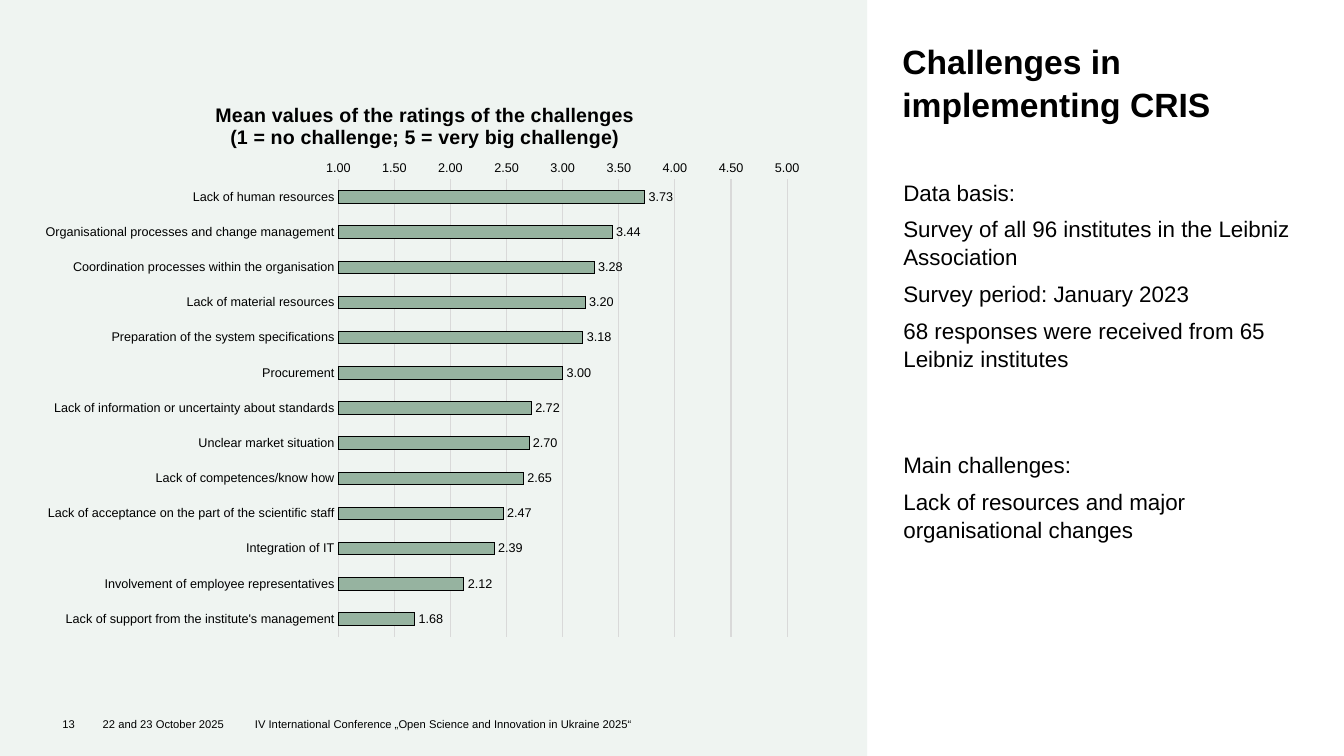
from dataclasses import dataclass

from lxml import etree
from pptx import Presentation
from pptx.chart.data import CategoryChartData
from pptx.dml.color import RGBColor
from pptx.enum.chart import XL_CHART_TYPE as ChartType, XL_LABEL_POSITION as LabelPos, XL_TICK_MARK as Tick
from pptx.enum.shapes import MSO_SHAPE as Shape
from pptx.enum.text import MSO_ANCHOR as Anchor
from pptx.oxml.ns import qn
from pptx.util import Pt

EMU_PER_PX = 9144
FONT = "Arial"
BLACK = RGBColor(0x00, 0x00, 0x00)
PANEL = RGBColor(0xEF, 0xF4, 0xF1)
GREEN = RGBColor(0x96, 0xB3, 0xA0)
GRID = RGBColor(0xD9, 0xD9, 0xD9)


@dataclass(frozen=True)
class Box:
    x: int
    y: int
    w: int
    h: int

    def emu(self) -> tuple[int, ...]:
        return tuple(v * EMU_PER_PX for v in (self.x, self.y, self.w, self.h))


@dataclass(frozen=True)
class Para:
    text: str
    before: int = 0


@dataclass(frozen=True)
class TextBlock:
    box: Box
    paras: tuple[Para, ...]
    size: int
    bold: bool = False
    anchor: Anchor = Anchor.TOP
    inset: tuple[int, int] = (0, 0)
    after: int = 0
    spacing: float = 1.0


TEXTS = (
    TextBlock(Box(895, 37, 412, 93), (Para("Challenges in implementing CRIS"),),
              24, bold=True, anchor=Anchor.MIDDLE, spacing=1.05),
    TextBlock(Box(896, 176, 385, 489), (
        Para("Data basis:"),
        Para("Survey of all 96 institutes in the Leibniz Association"),
        Para("Survey period: January 2023"),
        Para("68 responses were received from 65 Leibniz institutes"),
        Para("Main challenges:", before=50),
        Para("Lack of resources and major organisational changes"),
    ), 16, after=6, spacing=1.05),
    TextBlock(Box(92, 707, 151, 16), (Para("22 and 23 October 2025"),), 8, inset=(10, 5)),
    TextBlock(Box(243, 707, 792, 16),
              (Para("IV International Conference „Open Science and Innovation in Ukraine 2025“"),),
              8, inset=(10, 5)),
    TextBlock(Box(52, 707, 39, 16), (Para("13"),), 8, inset=(10, 5)),
)

CHART_BOX = Box(31, 76, 781, 567)
CHART_TITLE = ("Mean values of the ratings of the challenges\n"
               "(1 = no challenge; 5 = very big challenge)")
RATINGS = {
    "Lack of human resources": 3.73,
    "Organisational processes and change management": 3.44,
    "Coordination processes within the organisation": 3.28,
    "Lack of material resources": 3.2,
    "Preparation of the system specifications": 3.18,
    "Procurement": 3,
    "Lack of information or uncertainty about standards": 2.72,
    "Unclear market situation": 2.7,
    "Lack of competences/know how": 2.65,
    "Lack of acceptance on the part of the scientific staff": 2.47,
    "Integration of IT": 2.39,
    "Involvement of employee representatives": 2.12,
    "Lack of support from the institute's management": 1.68,
}


def set_font(font, size: int, bold: bool = False) -> None:
    font.name = FONT
    font.size = Pt(size)
    font.bold = bold
    font.color.rgb = BLACK


def add_text(s, block: TextBlock) -> None:
    tf = s.shapes.add_textbox(*block.box.emu()).text_frame
    tf.word_wrap = True
    tf.vertical_anchor = block.anchor
    side, top = (v * EMU_PER_PX for v in block.inset)
    tf.margin_left = tf.margin_right = side
    tf.margin_top = top
    tf.margin_bottom = 5 * EMU_PER_PX
    for i, para in enumerate(block.paras):
        p = tf.add_paragraph() if i else tf.paragraphs[0]
        p.text = para.text
        p.line_spacing = block.spacing
        p.space_after = Pt(block.after)
        if para.before:
            p.space_before = Pt(para.before)
        set_font(p.font, block.size, block.bold)


def set_layout(parent, index: int, **settings: object) -> None:
    for old in parent.findall(qn("c:layout")):
        parent.remove(old)
    layout = etree.Element(qn("c:layout"))
    manual = etree.SubElement(layout, qn("c:manualLayout"))
    for tag, value in settings.items():
        etree.SubElement(manual, qn(f"c:{tag}")).set("val", str(value))
    parent.insert(index, layout)


def add_ratings_chart(s) -> None:
    data = CategoryChartData(number_format="0.00")
    data.categories = list(RATINGS)
    data.add_series("Series 1", list(RATINGS.values()))
    chart = s.shapes.add_chart(ChartType.BAR_CLUSTERED, *CHART_BOX.emu(), data).chart
    set_font(chart.font, 10)
    chart.has_legend = False

    chart.has_title = True
    tf = chart.chart_title.text_frame
    tf.text = CHART_TITLE
    for p in tf.paragraphs:
        set_font(p.font, 14, bold=True)

    categories, values = chart.category_axis, chart.value_axis
    for axis in (categories, values):
        axis.major_tick_mark = axis.minor_tick_mark = Tick.NONE
        set_font(axis.tick_labels.font, 9)
    categories.reverse_order = True
    categories.format.line.color.rgb = GRID
    categories.format.line.width = Pt(0.75)
    values.minimum_scale, values.maximum_scale, values.major_unit = 1, 5, 0.5
    values.tick_labels.number_format = "0.00"
    values.tick_labels.number_format_is_linked = False
    values.format.line.fill.background()
    values.major_gridlines.format.line.color.rgb = GRID
    values.major_gridlines.format.line.width = Pt(0.75)

    plot = chart.plots[0]
    plot.gap_width = 182
    plot.vary_by_categories = False
    bars = plot.series[0].format
    bars.fill.solid()
    bars.fill.fore_color.rgb = GREEN
    bars.line.color.rgb = BLACK
    bars.line.width = Pt(0)
    plot.has_data_labels = True
    labels = plot.data_labels
    labels.show_value = True
    labels.position = LabelPos.OUTSIDE_END
    labels.number_format = "0.00"
    labels.number_format_is_linked = False
    set_font(labels.font, 9)

    c_chart = chart.element.find(qn("c:chart"))
    set_layout(c_chart.find(qn("c:title")), 1, xMode="edge", yMode="edge", x=0.23, y=0.04)
    set_layout(c_chart.find(qn("c:plotArea")), 0, layoutTarget="inner", xMode="edge",
               yMode="edge", x=0.39, y=0.18, w=0.57, h=0.8)


def main() -> None:
    prs = Presentation()
    prs.slide_width, prs.slide_height = 1333 * EMU_PER_PX, 750 * EMU_PER_PX
    s = prs.slides.add_slide(prs.slide_layouts[6])
    panel = s.shapes.add_shape(Shape.RECTANGLE, *Box(0, 0, 860, 750).emu())
    panel.shadow.inherit = False
    panel.fill.solid()
    panel.fill.fore_color.rgb = PANEL
    panel.line.fill.background()
    add_ratings_chart(s)
    for block in TEXTS:
        add_text(s, block)
    prs.save("out.pptx")


if __name__ == "__main__":
    main()
